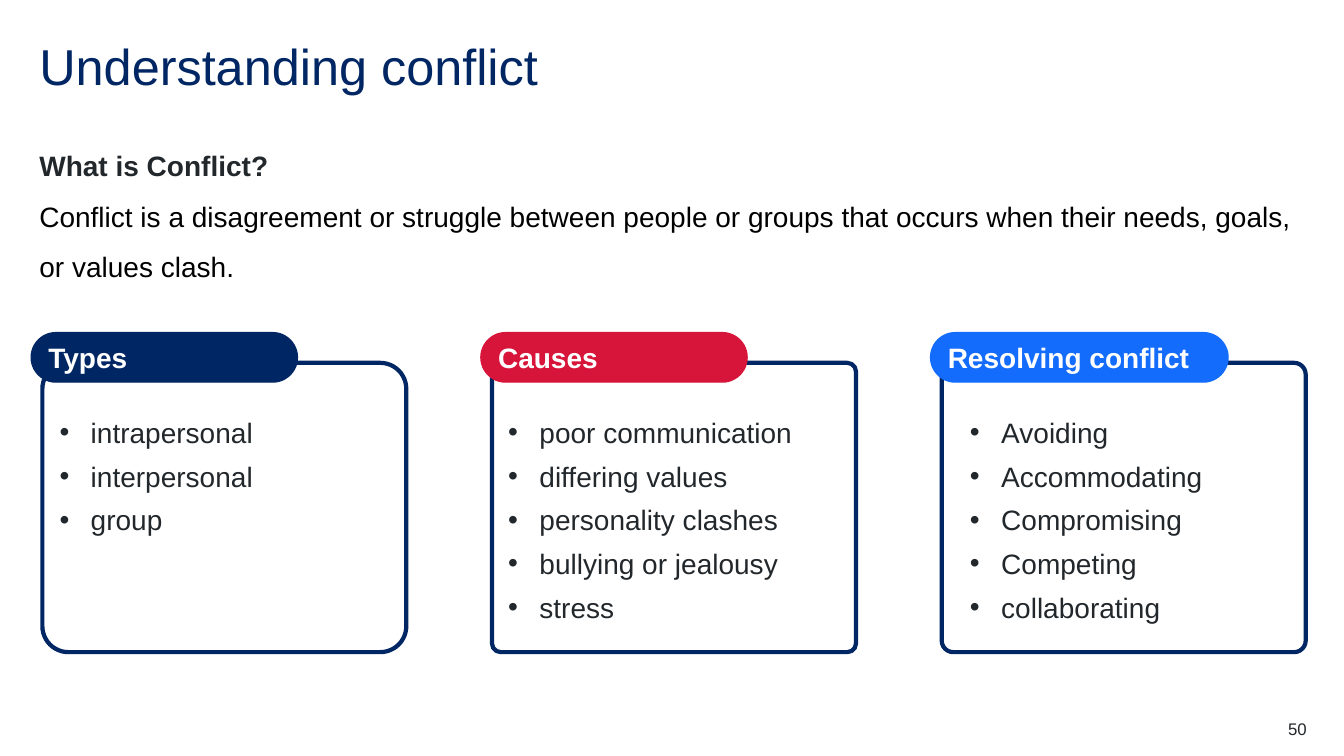
"""Build the "Understanding conflict" slide with three labelled cards."""
from lxml import etree
from pptx import Presentation
from pptx.dml.color import RGBColor
from pptx.enum.shapes import MSO_SHAPE
from pptx.enum.text import MSO_ANCHOR, PP_ALIGN
from pptx.oxml.ns import qn
from pptx.util import Emu, Pt

NAVY = RGBColor(0x00, 0x26, 0x64)
RED = RGBColor(0xD7, 0x15, 0x3A)
BLUE = RGBColor(0x14, 0x6C, 0xFD)
INK = RGBColor(0x22, 0x27, 0x2B)
BLACK = RGBColor(0x00, 0x00, 0x00)
WHITE = RGBColor(0xFF, 0xFF, 0xFF)
ROUNDED = MSO_SHAPE.ROUNDED_RECTANGLE
TOP, MIDDLE = MSO_ANCHOR.TOP, MSO_ANCHOR.MIDDLE
LEFT, RIGHT = PP_ALIGN.LEFT, PP_ALIGN.RIGHT

TITLE = "Understanding conflict"
QUESTION = "What is Conflict?"
DEFINITION = (
    "Conflict is a disagreement or struggle between people or groups "
    "that occurs when their needs, goals, or values clash."
)
PAGE_NUMBER = "50"
CARDS = [
    {"heading": "Types", "color": NAVY, "label_width": 264, "list_offset": 17,
     "corner": 0.09, "items": ["intrapersonal", "interpersonal", "group"]},
    {"heading": "Causes", "color": RED, "label_width": 264, "list_offset": 16,
     "corner": 0.03, "items": ["poor communication", "differing values",
                               "personality clashes", "bullying or jealousy",
                               "stress"]},
    {"heading": "Resolving conflict", "color": BLUE, "label_width": 295,
     "list_offset": 28, "corner": 0.04,
     "items": ["Avoiding", "Accommodating", "Compromising", "Competing",
               "collaborating"]},
]

PX = 9144
MARGIN = 39
CONTENT_WIDTH = 1256
CARD_LEFT, CARD_TOP, CARD_WIDTH, CARD_HEIGHT = 42, 360, 361, 287
CARD_PITCH = 446
LABEL_OVERHANG, LABEL_TOP, LABEL_HEIGHT = 11, 330, 49
LIST_TOP, LIST_WIDTH, LIST_HEIGHT = 402, 328, 205
BULLET_INDENT = 31


def px(*lengths):
    return [Emu(length * PX) for length in lengths]


def add_bullet(paragraph):
    properties = paragraph._p.get_or_add_pPr()
    properties.set("marL", str(BULLET_INDENT * PX))
    properties.set("indent", str(-BULLET_INDENT * PX))
    font = etree.SubElement(properties, qn("a:buFont"))
    font.set("typeface", "Arial")
    bullet = etree.SubElement(properties, qn("a:buChar"))
    bullet.set("char", "•")


def add_run(paragraph, text, size=20, color=INK, bold=False):
    run = paragraph.add_run()
    run.text = text
    run.font.name = "Arial"
    run.font.size = Pt(size)
    run.font.bold = bold
    run.font.color.rgb = color


def write(shape, lines, anchor=TOP, align=LEFT, spacing=1.0, bullets=False,
          **run_format):
    frame = shape.text_frame
    frame.word_wrap = True
    frame.vertical_anchor = anchor
    for index, line in enumerate(lines):
        paragraph = frame.paragraphs[0] if index == 0 else frame.add_paragraph()
        paragraph.alignment = align
        paragraph.line_spacing = spacing
        if bullets:
            add_bullet(paragraph)
        add_run(paragraph, line, **run_format)
    return frame


def add_box(slide, *bounds):
    box = slide.shapes.add_textbox(*px(*bounds))
    frame = box.text_frame
    frame.margin_left = frame.margin_right = 0
    frame.margin_top = frame.margin_bottom = 0
    return box


def add_rounded(slide, *bounds, corner, fill, line, line_width):
    shape = slide.shapes.add_shape(ROUNDED, *px(*bounds))
    shape.shadow.inherit = False
    shape.adjustments[0] = corner
    shape.fill.solid()
    shape.fill.fore_color.rgb = fill
    shape.line.color.rgb = line
    shape.line.width = Pt(line_width)
    return shape


def add_card(slide, left, card):
    add_rounded(slide, left, CARD_TOP, CARD_WIDTH, CARD_HEIGHT,
                corner=card["corner"], fill=WHITE, line=NAVY, line_width=3)
    label = add_rounded(slide, left - LABEL_OVERHANG, LABEL_TOP,
                        card["label_width"], LABEL_HEIGHT, corner=0.5,
                        fill=card["color"], line=card["color"], line_width=1)
    write(label, [card["heading"]], anchor=MIDDLE, color=WHITE, bold=True)
    items = add_box(slide, left + card["list_offset"], LIST_TOP,
                    LIST_WIDTH, LIST_HEIGHT)
    write(items, card["items"], spacing=1.3, bullets=True)


def main():
    presentation = Presentation()
    presentation.slide_width, presentation.slide_height = px(1333, 750)
    slide = presentation.slides.add_slide(presentation.slide_layouts[6])

    title = add_box(slide, MARGIN, 39, CONTENT_WIDTH, 60)
    write(title, [TITLE], anchor=MIDDLE, spacing=0.9, size=36, color=NAVY)

    body = add_box(slide, MARGIN, 131, CONTENT_WIDTH, 167)
    paragraph = write(body, [QUESTION], spacing=1.5, bold=True).paragraphs[0]
    paragraph.space_after = Pt(12)
    paragraph.add_line_break()
    add_run(paragraph, DEFINITION, color=BLACK)

    for index, card in enumerate(CARDS):
        add_card(slide, CARD_LEFT + index * CARD_PITCH, card)

    number = add_box(slide, 1217, 713, 79, 20)
    write(number, [PAGE_NUMBER], align=RIGHT, size=12)
    presentation.save("out.pptx")


if __name__ == "__main__":
    main()
